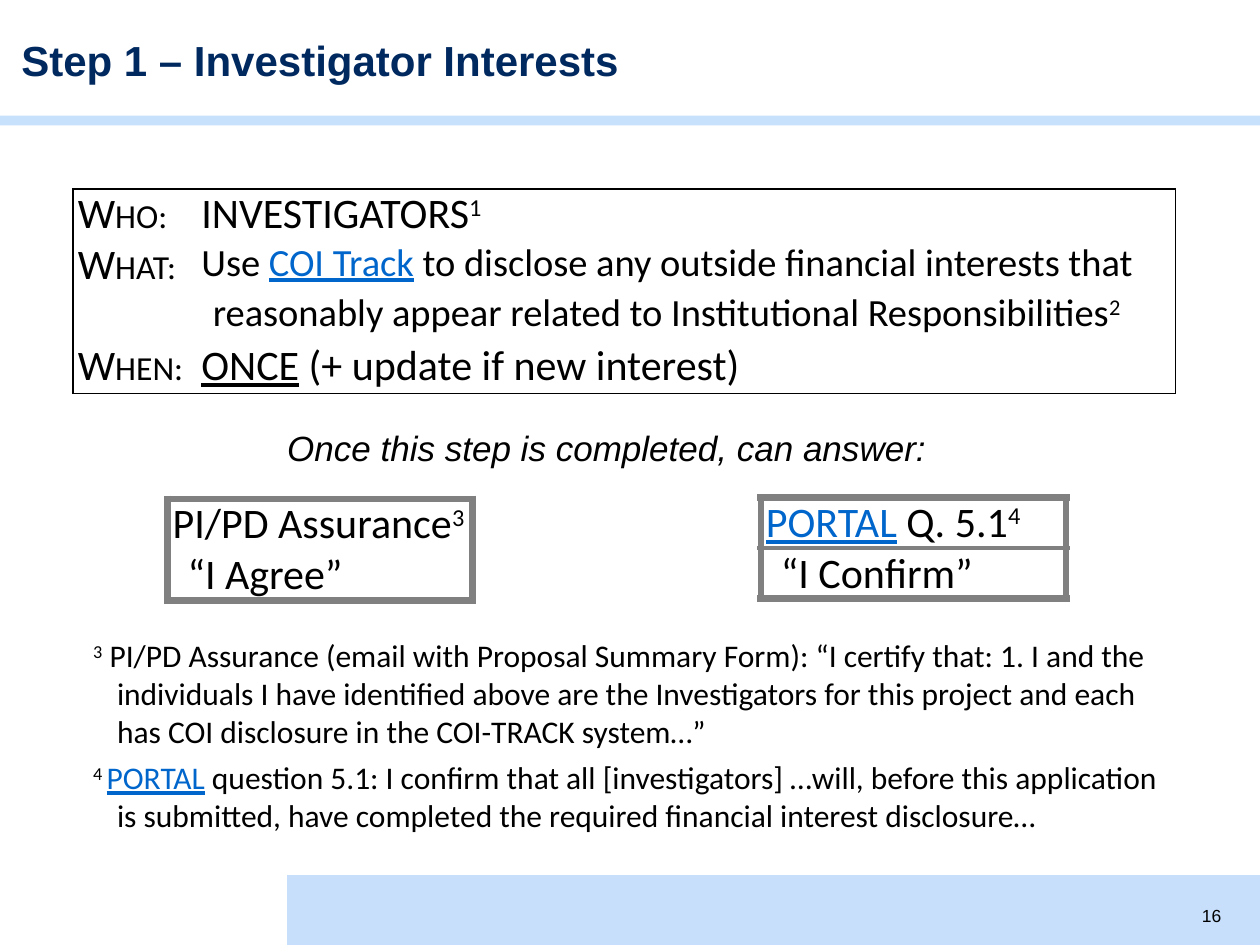
from dataclasses import dataclass
from typing import Optional

import pptx
import pptx.dml.color
import pptx.enum.shapes
import pptx.enum.text
import pptx.oxml
import pptx.oxml.ns
import pptx.util

Cm = pptx.util.Cm
Pt = pptx.util.Pt


@dataclass(frozen=True)
class Theme:
    navy: str = "002960"
    black: str = "000000"
    link: str = "0066CC"
    grey: str = "808080"
    footer_blue: str = "C7DFFB"
    rule_blue: str = "C7E0FB"
    heading_font: str = "Arial"
    body_font: str = "Calibri"
    large: int = 24
    detail: int = 22
    caption: int = 20
    footnote: int = 18
    number: int = 10


THEME = Theme()


@dataclass(frozen=True)
class Run:
    text: str
    size: int = THEME.large
    color: str = THEME.black
    font: str = THEME.body_font
    bold: bool = False
    italic: bool = False
    underline: bool = False
    superscript: bool = False
    small_caps: bool = False


@dataclass(frozen=True)
class Paragraph:
    runs: tuple[Run, ...]
    margin: float = 0
    indent: float = 0


@dataclass(frozen=True)
class Box:
    left: float
    top: float
    width: float
    height: float

    def lengths(self) -> tuple:
        return Cm(self.left), Cm(self.top), Cm(self.width), Cm(self.height)


@dataclass(frozen=True)
class Grid:
    """A table framed by an outer border, with an optional line between rows."""
    left: float
    top: float
    columns: tuple[float, ...]
    rows: tuple[float, ...]
    cells: tuple[tuple[Optional[Paragraph], ...], ...]
    color: str
    frame: float
    divider: float = 0


def link(text: str, size: int = THEME.large) -> Run:
    return Run(text, size, THEME.link, underline=True)


def note_mark(text: str, size: int = THEME.large) -> Run:
    return Run(text, size, superscript=True)


def label(text: str) -> Paragraph:
    return Paragraph((Run(text, small_caps=True),))


def write_paragraph(frame, content: Paragraph) -> None:
    paragraph = frame.paragraphs[0]
    properties = paragraph._p.get_or_add_pPr()
    properties.set("marL", str(Cm(content.margin)))
    properties.set("indent", str(Cm(content.indent)))
    for item in content.runs:
        run = paragraph.add_run()
        run.text = item.text
        font = run.font
        font.name = item.font
        font.size = Pt(item.size)
        font.color.rgb = pptx.dml.color.RGBColor.from_string(item.color)
        font.bold = item.bold
        font.italic = item.italic
        font.underline = item.underline
        if item.superscript:
            run._r.get_or_add_rPr().set("baseline", "30000")
        if item.small_caps:
            run._r.get_or_add_rPr().set("cap", "small")


def add_bar(slide, box: Box, color: str) -> None:
    shape = slide.shapes.add_shape(pptx.enum.shapes.MSO_SHAPE.RECTANGLE, *box.lengths())
    shape.shadow.inherit = False
    shape.fill.solid()
    shape.fill.fore_color.rgb = pptx.dml.color.RGBColor.from_string(color)
    shape.line.fill.background()


def add_text(slide, box: Box, content: Paragraph, inset: bool = True,
             wrap: bool = True, middle: bool = False) -> None:
    frame = slide.shapes.add_textbox(*box.lengths()).text_frame
    frame.word_wrap = wrap
    if not inset:
        frame.margin_left = frame.margin_right = frame.margin_top = frame.margin_bottom = 0
    if middle:
        frame.vertical_anchor = pptx.enum.text.MSO_ANCHOR.MIDDLE
    write_paragraph(frame, content)


def set_borders(cell, widths: dict[str, float], color: str) -> None:
    properties = cell._tc.get_or_add_tcPr()
    for position, side in enumerate("LRTB"):
        width = widths[side]
        paint = f'<a:solidFill><a:srgbClr val="{color}"/></a:solidFill>' if width else "<a:noFill/>"
        border = pptx.oxml.parse_xml(
            f'<a:ln{side} {pptx.oxml.ns.nsdecls("a")} w="{Pt(width)}">{paint}</a:ln{side}>')
        properties.insert(position, border)


def add_grid(slide, grid: Grid) -> None:
    box = Box(grid.left, grid.top, sum(grid.columns), sum(grid.rows))
    last_row, last_column = len(grid.rows) - 1, len(grid.columns) - 1
    table = slide.shapes.add_table(last_row + 1, last_column + 1, *box.lengths()).table
    table.first_row = table.horz_banding = False
    for column, width in zip(table.columns, grid.columns):
        column.width = Cm(width)
    for row_index, height in enumerate(grid.rows):
        table.rows[row_index].height = Cm(height)
        for column_index, content in enumerate(grid.cells[row_index]):
            cell = table.cell(row_index, column_index)
            cell.fill.background()
            cell.margin_left = cell.margin_right = Cm(0.1)
            cell.margin_top = cell.margin_bottom = 0
            if content:
                write_paragraph(cell.text_frame, content)
            set_borders(cell, {
                "L": grid.frame if column_index == 0 else 0,
                "R": grid.frame if column_index == last_column else 0,
                "T": grid.frame if row_index == 0 else grid.divider,
                "B": grid.frame if row_index == last_row else grid.divider,
            }, grid.color)


def add_answer(slide, left: float, top: float, question: tuple[Run, ...],
               answer: str, divider: float = 0) -> None:
    cells = ((Paragraph(question),), (Paragraph((Run(answer),), margin=0.3),))
    add_grid(slide, Grid(left, top, (6.15,), (1.02, 1.02), cells, THEME.grey, 4.5, divider))


def add_footnote(slide, top: float, height: float, runs: tuple[Run, ...]) -> None:
    add_text(slide, Box(1.47, top, 22.23, height), Paragraph(runs, 0.64, -0.48))


def main() -> None:
    presentation = pptx.Presentation()
    presentation.slide_width, presentation.slide_height = Cm(25.4), Cm(19.05)
    slide = presentation.slides.add_slide(presentation.slide_layouts[6])

    add_bar(slide, Box(5.79, 17.64, 19.61, 1.41), THEME.footer_blue)
    add_bar(slide, Box(0, 2.33, 25.4, 0.2), THEME.rule_blue)
    title = Run("Step 1 – Investigator Interests", THEME.large, THEME.navy,
                THEME.heading_font, bold=True)
    add_text(slide, Box(0.43, 0.69, 21.77, 1.02), Paragraph((title,)), inset=False, middle=True)

    detail, small = THEME.detail, THEME.footnote
    steps = (
        (label("Who:"), Paragraph((Run("INVESTIGATORS"), note_mark("1")))),
        (label("What:"), Paragraph((
            Run("Use ", detail), link("COI Track", detail),
            Run(" to disclose any outside financial interests that", detail)), 0.28, -0.28)),
        (None, Paragraph((
            Run("reasonably appear related to Institutional Responsibilities", detail),
            note_mark("2", detail)), 0.28, -0.05)),
        (label("When:"), Paragraph((
            Run("ONCE", underline=True), Run(" (+ update if new interest)")))),
    )
    add_grid(slide, Grid(1.47, 3.81, (2.49, 19.74), (1.02, 1.02, 1.02, 1.06),
                         steps, THEME.black, 1))

    caption = Run("Once this step is completed, can answer:", THEME.caption,
                  font=THEME.heading_font, italic=True)
    add_text(slide, Box(5.54, 8.48, 15.04, 1.12), Paragraph((caption,)))
    add_answer(slide, 3.38, 10.06, (Run("PI/PD Assurance"), note_mark("3")), "“I Agree”")
    add_answer(slide, 15.34, 10.03, (link("PORTAL"), Run(" Q. 5.1"), note_mark("4")),
               "“I Confirm”", divider=2.25)

    add_footnote(slide, 12.7, 2.57, (
        note_mark("3", small),
        Run(" PI/PD Assurance (email with Proposal Summary Form): “I certify that: 1. I and the "
            "individuals I have identified above are the Investigators for this project and each "
            "has COI disclosure in the COI-TRACK system…”", small)))
    add_footnote(slide, 15.16, 1.8, (
        note_mark("4 ", small), link("PORTAL", small),
        Run(" question 5.1: I confirm that all [investigators] …will, before this application "
            "is submitted, have completed the required financial interest disclosure…", small)))

    number = Run("16", THEME.number, font=THEME.heading_font)
    add_text(slide, Box(24.23, 18.24, 0.56, 0.43), Paragraph((number,)), inset=False, wrap=False)
    presentation.save("out.pptx")


if __name__ == "__main__":
    main()
